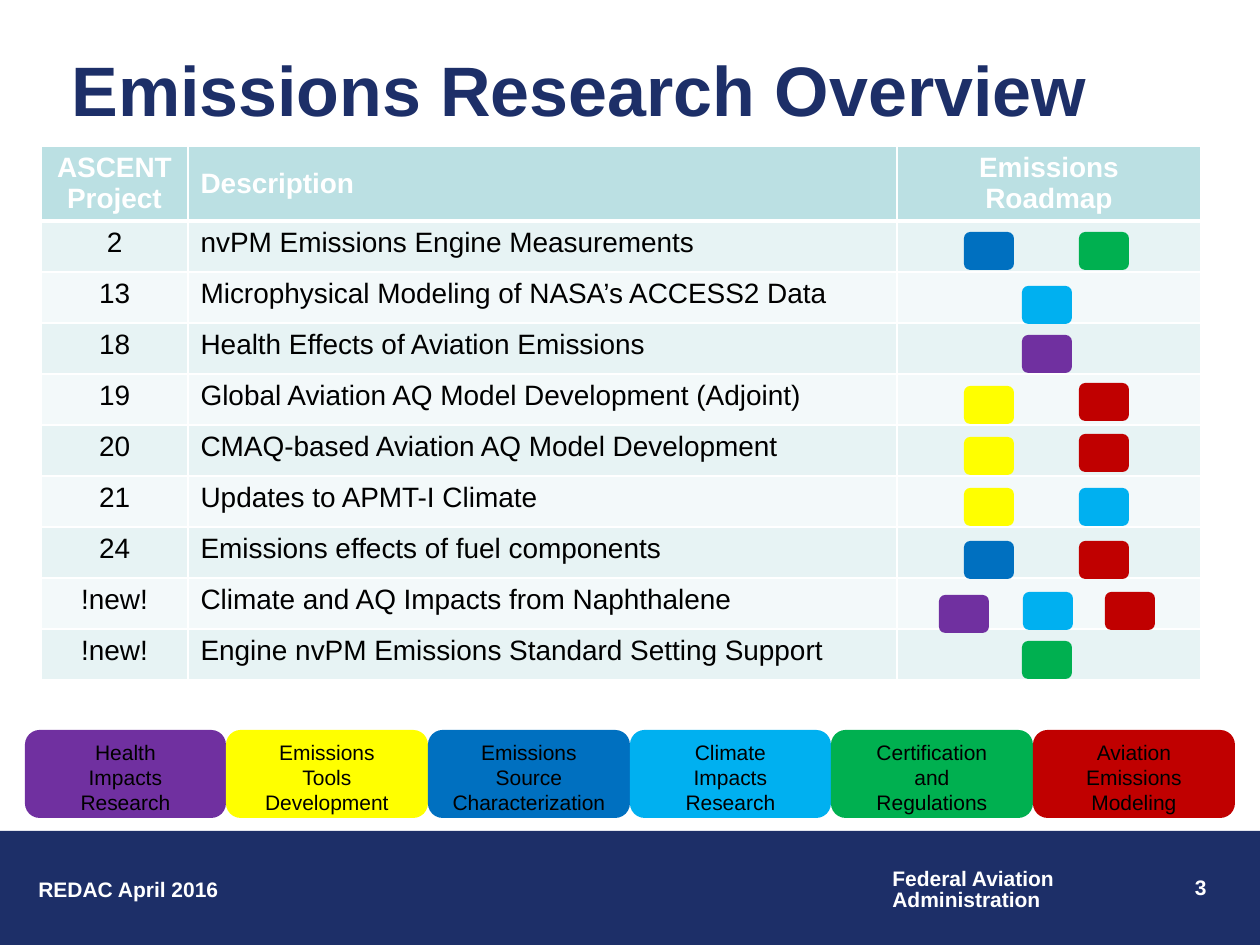
from dataclasses import dataclass

from lxml.etree import SubElement
from pptx import Presentation
from pptx.dml.color import RGBColor
from pptx.enum.shapes import MSO_SHAPE as Shape
from pptx.enum.text import MSO_ANCHOR as Anchor, PP_ALIGN as Align
from pptx.oxml.ns import qn
from pptx.util import Pt

EMU_PER_PX = 914400 / 126
NAVY, WHITE, BLACK = "1D2F68", "FFFFFF", "000000"
HEADER_FILL, BAND_FILLS = "BBE0E3", ("E7F3F4", "F3F9FA")
HEALTH, TOOLS, SOURCE = "7030A0", "FFFF00", "0070C0"
CLIMATE, CERTIFICATION, MODELING = "00B0F0", "00B050", "C00000"
LEFT, MIDDLE, RIGHT = 964, 1022, 1079
CHIP_WIDTH, CHIP_HEIGHT = 50, 38


@dataclass(frozen=True)
class TextStyle:
    size: int
    color: str
    bold: bool = False
    align: Align = Align.LEFT
    spacing: float = 1.0


@dataclass(frozen=True)
class Chip:
    topic: str
    x: int
    y: int


@dataclass(frozen=True)
class Project:
    number: str
    description: str
    chips: tuple[Chip, ...]


@dataclass(frozen=True)
class Topic:
    color: str
    lines: tuple[str, ...]


PROJECTS = [
    Project("2", "nvPM Emissions Engine Measurements",
            (Chip(SOURCE, LEFT, 232), Chip(CERTIFICATION, RIGHT, 232))),
    Project("13", "Microphysical Modeling of NASA’s ACCESS2 Data",
            (Chip(CLIMATE, MIDDLE, 286),)),
    Project("18", "Health Effects of Aviation Emissions",
            (Chip(HEALTH, MIDDLE, 335),)),
    Project("19", "Global Aviation AQ Model Development (Adjoint)",
            (Chip(TOOLS, LEFT, 386), Chip(MODELING, RIGHT, 383))),
    Project("20", "CMAQ-based Aviation AQ Model Development",
            (Chip(TOOLS, LEFT, 437), Chip(MODELING, RIGHT, 434))),
    Project("21", "Updates to APMT-I Climate",
            (Chip(TOOLS, LEFT, 488), Chip(CLIMATE, RIGHT, 488))),
    Project("24", "Emissions effects of fuel components",
            (Chip(SOURCE, LEFT, 541), Chip(MODELING, RIGHT, 541))),
    Project("!new!", "Climate and AQ Impacts from Naphthalene",
            (Chip(HEALTH, 939, 595), Chip(CLIMATE, 1023, 592),
             Chip(MODELING, 1105, 592))),
    Project("!new!", "Engine nvPM Emissions Standard Setting Support",
            (Chip(CERTIFICATION, MIDDLE, 641),)),
]
TOPICS = [
    Topic(HEALTH, ("Health", "Impacts", "Research")),
    Topic(TOOLS, ("Emissions", "Tools", "Development")),
    Topic(SOURCE, ("Emissions", "Source", "Characterization")),
    Topic(CLIMATE, ("Climate", "Impacts", "Research")),
    Topic(CERTIFICATION, ("Certification", "and", "Regulations")),
    Topic(MODELING, ("Aviation", "Emissions", "Modeling")),
]


def px(length: int) -> int:
    return round(length * EMU_PER_PX)


def rgb(color: str) -> RGBColor:
    return RGBColor.from_string(color)


def write(frame, lines: tuple[str, ...], style: TextStyle) -> None:
    """Fill the first paragraph with one run per line."""
    paragraph = frame.paragraphs[0]
    paragraph.alignment = style.align
    paragraph.line_spacing = style.spacing
    for index, line in enumerate(lines):
        if index:
            paragraph.add_line_break()
        run = paragraph.add_run()
        run.text = line
        run.font.name = "Arial"
        run.font.size = Pt(style.size)
        run.font.bold = style.bold
        run.font.color.rgb = rgb(style.color)


def add_label(slide, x: int, y: int, width: int, height: int,
              lines: tuple[str, ...], style: TextStyle,
              anchor: Anchor = Anchor.TOP) -> None:
    frame = slide.shapes.add_textbox(px(x), px(y), px(width), px(height)).text_frame
    frame.word_wrap = True
    frame.vertical_anchor = anchor
    write(frame, lines, style)


def add_block(slide, kind: Shape, x: int, y: int, width: int, height: int, color: str):
    block = slide.shapes.add_shape(kind, px(x), px(y), px(width), px(height))
    block.shadow.inherit = False
    block.fill.solid()
    block.fill.fore_color.rgb = rgb(color)
    block.line.fill.background()
    return block


def set_borders(cell, top: int, bottom: int) -> None:
    """Draw white cell borders; they must precede the fill in the cell XML."""
    properties = cell._tc.get_or_add_tcPr()
    for side, points in (("L", 1), ("R", 1), ("T", top), ("B", bottom)):
        border = SubElement(properties, qn(f"a:ln{side}"), w=str(Pt(points)))
        solid = SubElement(border, qn("a:solidFill"))
        SubElement(solid, qn("a:srgbClr"), val=WHITE)


def add_project_table(slide) -> None:
    widths, header_height, row_height = (147, 709, 304), 74, 51
    table = slide.shapes.add_table(
        len(PROJECTS) + 1, len(widths), px(41), px(146), px(sum(widths)),
        px(header_height + row_height * len(PROJECTS))).table
    for column, width in zip(table.columns, widths):
        column.width = px(width)
    rows = [(("ASCENT", "Project"), ("Description",), ("Emissions", "Roadmap"))]
    rows += [((project.number,), (project.description,), ()) for project in PROJECTS]
    for row, texts in enumerate(rows):
        header = row == 0
        table.rows[row].height = px(header_height if header else row_height)
        for column, lines in enumerate(texts):
            cell = table.cell(row, column)
            set_borders(cell, top=3 if row == 1 else 1, bottom=3 if header else 1)
            cell.fill.solid()
            cell.fill.fore_color.rgb = rgb(HEADER_FILL if header else BAND_FILLS[(row - 1) % 2])
            if header:
                cell.vertical_anchor = Anchor.MIDDLE
                cell.margin_top = cell.margin_bottom = px(4)
            align = Align.LEFT if column == 1 else Align.CENTER
            write(cell.text_frame, lines,
                  TextStyle(16, WHITE if header else BLACK, header, align))


def add_legend(slide) -> None:
    left, top, total_width, height = 25, 730, 1210, 88
    edges = [left + total_width * step // len(TOPICS) for step in range(len(TOPICS) + 1)]
    style = TextStyle(12, BLACK, align=Align.CENTER)
    for topic, start, end in zip(TOPICS, edges, edges[1:]):
        block = add_block(slide, Shape.ROUNDED_RECTANGLE, start, top,
                          end - start, height, topic.color)
        frame = block.text_frame
        frame.word_wrap = True
        frame.vertical_anchor = Anchor.TOP
        frame.margin_top, frame.margin_bottom = px(5), 0
        write(frame, topic.lines, style)


def add_footer(slide) -> None:
    add_block(slide, Shape.RECTANGLE, 0, 831, 1260, 114, NAVY)
    add_label(slide, 26, 870, 515, 38, ("REDAC April 2016",), TextStyle(12, WHITE, True))
    add_label(slide, 880, 863, 189, 55, ("Federal Aviation", "Administration"),
              TextStyle(12, WHITE, True, spacing=0.85))
    add_label(slide, 956, 868, 263, 63, ("3",), TextStyle(12, WHITE, True, Align.RIGHT))


def main() -> None:
    presentation = Presentation()
    presentation.slide_width, presentation.slide_height = px(1260), px(945)
    slide = presentation.slides.add_slide(presentation.slide_layouts[6])
    add_footer(slide)
    add_label(slide, 59, 47, 1168, 84, ("Emissions Research Overview",),
              TextStyle(40, NAVY, True), Anchor.MIDDLE)
    add_project_table(slide)
    add_legend(slide)
    for project in PROJECTS:
        for chip in project.chips:
            add_block(slide, Shape.ROUNDED_RECTANGLE, chip.x, chip.y,
                      CHIP_WIDTH, CHIP_HEIGHT, chip.topic)
    presentation.save("out.pptx")


if __name__ == "__main__":
    main()
